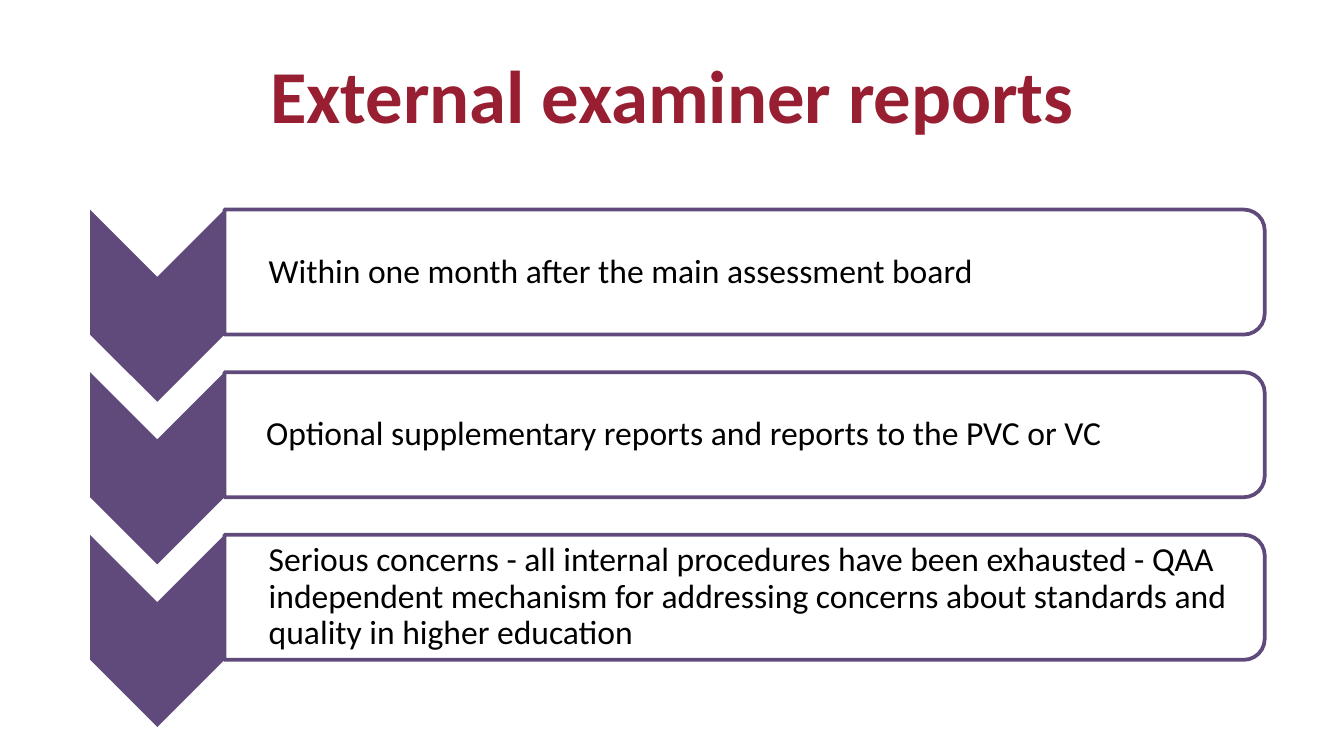
from pptx import Presentation
from pptx.dml.color import RGBColor
from pptx.enum.shapes import MSO_SHAPE as Shape
from pptx.enum.text import MSO_ANCHOR as Anchor, PP_ALIGN as Align
from pptx.oxml.ns import qn
from pptx.util import Inches, Pt
from lxml.etree import SubElement

COLORS = {"title": "981E32", "purple": "604A7B", "white": "FFFFFF", "black": "000000"}
STEPS = [
    ("Within one month after the main assessment board", 0.33),
    ("Optional supplementary reports and reports to the PVC or VC", 0.31),
    ("Serious concerns - all internal procedures have been exhausted - QAA "
     "independent mechanism for addressing concerns about standards and "
     "quality in higher education", 0.33),
]
SLIDE_WIDTH = 10
SLIDE_HEIGHT = SLIDE_WIDTH * 9 / 16
FIRST_TOP, STEP_PITCH = 1.56, 1.21
CHEVRON_LEFT, CHEVRON_WIDTH, CHEVRON_HEIGHT = 0.67, 1, 1.43
BAR_LEFT, BAR_WIDTH, BAR_HEIGHT = 1.67, 7.74, 0.93
TEXT_WIDTH, TEXT_HEIGHT = 7.7, 0.84


def color(name):
    return RGBColor.from_string(COLORS[name])


def write_text(box, text, *, size, ink, bold=False, align=Align.LEFT,
               line_spacing=1.0, margins=(0.1, 0.05, 0.1, 0.05)):
    frame = box.text_frame
    frame.word_wrap = True
    frame.vertical_anchor = Anchor.MIDDLE
    (frame.margin_left, frame.margin_top,
     frame.margin_right, frame.margin_bottom) = map(Inches, margins)
    para = frame.paragraphs[0]
    para.alignment = align
    para.line_spacing = line_spacing
    span = para.add_run()
    span.text = text
    span.font.name = "Calibri"
    span.font.size = Pt(size)
    span.font.bold = bold
    span.font.color.rgb = color(ink)


def add_turned_shape(page, kind, left, top, width, height, fill):
    """Add a shape turned by 90 degrees that covers the given visible area."""
    shape = page.shapes.add_shape(
        kind,
        Inches(left + (width - height) / 2), Inches(top + (height - width) / 2),
        Inches(height), Inches(width))
    shape.rotation = 90
    shape.shadow.inherit = False
    shape.fill.solid()
    shape.fill.fore_color.rgb = color(fill)
    shape.line.fill.background()
    return shape


def add_chevron(page, top):
    add_turned_shape(page, Shape.CHEVRON, CHEVRON_LEFT, top,
                     CHEVRON_WIDTH, CHEVRON_HEIGHT, "purple")


def add_bar(page, top):
    bar = add_turned_shape(page, Shape.ROUND_2_SAME_RECTANGLE, BAR_LEFT, top,
                           BAR_WIDTH, BAR_HEIGHT, "white")
    bar.line.color.rgb = color("purple")
    bar.line.width = Pt(2)
    fill_color = bar.element.spPr.find(qn("a:solidFill")).find(qn("a:srgbClr"))
    SubElement(fill_color, qn("a:alpha"), val="90000")


def add_step(page, top, text, indent):
    add_chevron(page, top)
    add_bar(page, top)
    box = page.shapes.add_textbox(
        Inches(BAR_LEFT), Inches(top + (BAR_HEIGHT - TEXT_HEIGHT) / 2),
        Inches(TEXT_WIDTH), Inches(TEXT_HEIGHT))
    write_text(box, text, size=18, ink="black", line_spacing=0.9,
               margins=(indent, 0.01, 0.01, 0.01))


def add_title(page, text):
    title = page.shapes.title
    title.left, title.top = Inches(0.5), Inches(0.23)
    title.width, title.height = Inches(9), Inches(0.94)
    write_text(title, text, size=40, ink="title", bold=True, align=Align.CENTER)


def main():
    deck = Presentation()
    deck.slide_width, deck.slide_height = Inches(SLIDE_WIDTH), Inches(SLIDE_HEIGHT)
    page = deck.slides.add_slide(deck.slide_layouts[5])
    add_title(page, "External examiner reports")
    for index, (text, indent) in enumerate(STEPS):
        add_step(page, FIRST_TOP + index * STEP_PITCH, text, indent)
    deck.save("out.pptx")


if __name__ == "__main__":
    main()
